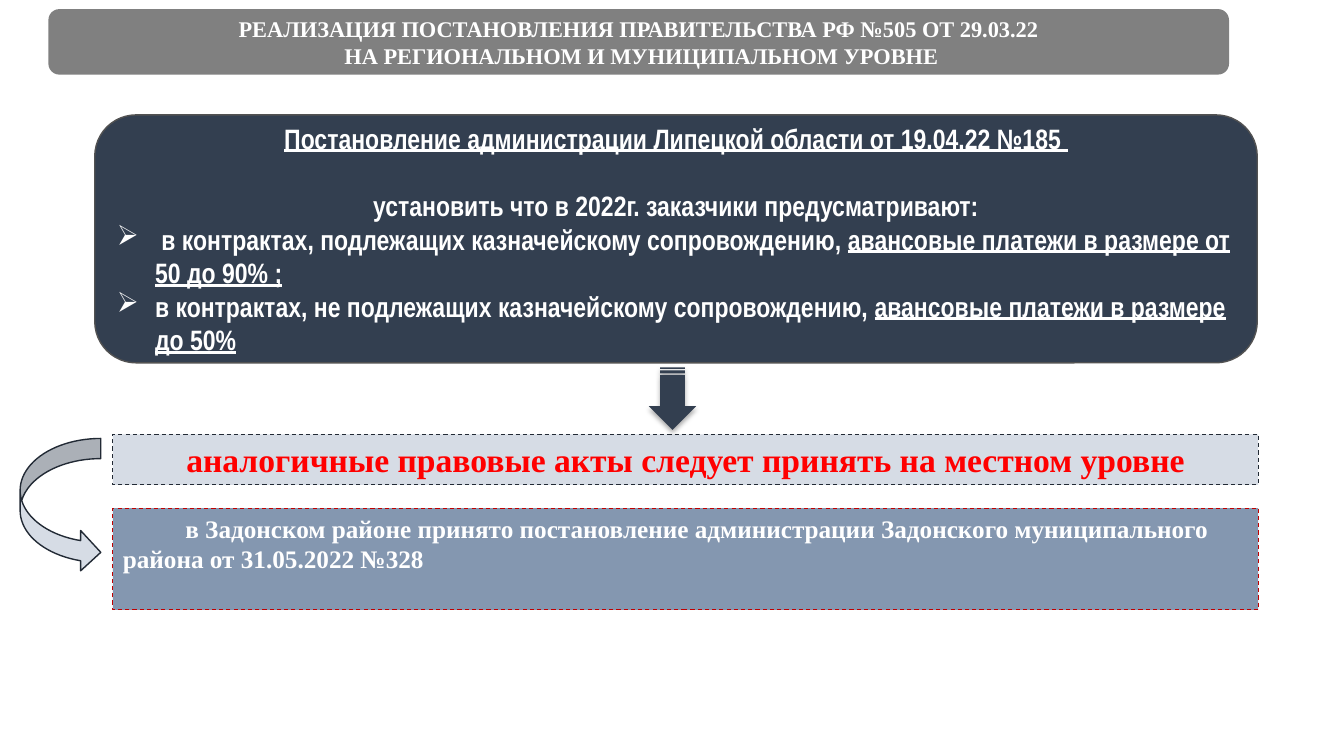
import pptx
import pptx.util
import pptx.dml.color
import pptx.enum.dml
import pptx.enum.shapes
import pptx.enum.text
import pptx.oxml
import pptx.oxml.ns

SHAPE = pptx.enum.shapes.MSO_SHAPE
ALIGN = pptx.enum.text.PP_ALIGN
ANCHOR = pptx.enum.text.MSO_ANCHOR
SERIF, NARROW = "Times New Roman", "Arial Narrow"
EMU_PER_PX = 9144
BULLET_INDENT, FIRST_LINE = 38, 62
NS = pptx.oxml.ns.nsdecls("a")

TITLE = [
    ("center", 0, [("РЕАЛИЗАЦИЯ ПОСТАНОВЛЕНИЯ ПРАВИТЕЛЬСТВА РФ №505 ОТ 29.03.22", False)]),
    ("center", 0, [(" НА РЕГИОНАЛЬНОМ И МУНИЦИПАЛЬНОМ УРОВНЕ", False)]),
]
DECREE = [
    ("center", 24, [("Постановление администрации Липецкой области от 19.04.22 №185 ", True)]),
    ("center", 0, [("установить что в 2022г. заказчики предусматривают:", False)]),
    ("bullet", 0, [(" в контрактах, подлежащих казначейскому сопровождению, ", False),
                   ("авансовые платежи в размере от 50 до 90% ;", True)]),
    ("bullet", 0, [("в контрактах, не подлежащих казначейскому сопровождению, ", False),
                   ("авансовые платежи в размере до 50%", True)]),
]
LOCAL_ACTS = [
    ("center", 0, [("аналогичные правовые акты следует принять на местном уровне", False)]),
]
DISTRICT = [
    ("first_line", 0, [("в Задонском районе принято постановление администрации "
                        "Задонского муниципального района от 31.05.2022 №328", False)]),
]

# kind, (left, top, width, height), fill, (line, points, dashed), anchor, (font, size, colour), text
BOXES = [
    (SHAPE.ROUNDED_RECTANGLE, (48, 9, 1171, 65), "808080", None,
     ANCHOR.MIDDLE, (SERIF, 16, "FFFFFF"), TITLE),
    (SHAPE.ROUNDED_RECTANGLE, (94, 114, 1153, 246), "333F50", ("525252", 1, False),
     ANCHOR.MIDDLE, (NARROW, 20, "FFFFFF"), DECREE),
    (SHAPE.RECTANGLE, (112, 431, 1136, 50), "D6DCE5", ("222A35", 0.75, True),
     ANCHOR.TOP, (SERIF, 24, "FF0000"), LOCAL_ACTS),
    (SHAPE.RECTANGLE, (112, 504, 1136, 101), "8497B0", ("C00000", 0.75, True),
     ANCHOR.TOP, (SERIF, 18, "FFFFFF"), DISTRICT),
]
DOWN_ARROW = (SHAPE.STRIPED_RIGHT_ARROW, (636, 372, 62, 47), "333F50", None)
CURVED_ARROW = (SHAPE.CURVED_RIGHT_ARROW, (20, 435, 80, 133), "D6DCE5", ("222A35", 1, False))


def px(n):
    return pptx.util.Emu(n * EMU_PER_PX)


def rgb(value):
    return pptx.dml.color.RGBColor.from_string(value)


def add_shape(s, kind, box, fill, line):
    sp = s.shapes.add_shape(kind, *map(px, box))
    sp.shadow.inherit = False
    sp.fill.solid()
    sp.fill.fore_color.rgb = rgb(fill)
    if line is None:
        sp.line.fill.background()
    else:
        colour, width, dashed = line
        sp.line.color.rgb = rgb(colour)
        sp.line.width = pptx.util.Pt(width)
        if dashed:
            sp.line.dash_style = pptx.enum.dml.MSO_LINE.DASH
    return sp


def add_text(sp, anchor, style, lines):
    font, size, colour = style
    tf = sp.text_frame
    tf.word_wrap = True
    tf.vertical_anchor = anchor
    for i, (layout, after, runs) in enumerate(lines):
        p = tf.paragraphs[0] if i == 0 else tf.add_paragraph()
        p.alignment = ALIGN.CENTER if layout == "center" else ALIGN.LEFT
        p.space_after = pptx.util.Pt(after)
        p.font.name = font
        p.font.size = pptx.util.Pt(size)
        p.font.bold = True
        p.font.color.rgb = rgb(colour)
        for text, underlined in runs:
            r = p.add_run()
            r.text = text
            if underlined:
                r.font.underline = True
        pPr = p._p.get_or_add_pPr()
        if layout == "first_line":
            pPr.set("indent", str(px(FIRST_LINE)))
        elif layout == "bullet":
            pPr.set("marL", str(px(BULLET_INDENT)))
            pPr.set("indent", str(-px(BULLET_INDENT)))
            bullet = pptx.oxml.parse_xml(f'<a:buChar {NS} char="➢"/>')
            pPr.find(pptx.oxml.ns.qn("a:defRPr")).addprevious(bullet)


def add_shadow(sp):
    effects = sp._element.spPr.find(pptx.oxml.ns.qn("a:effectLst"))
    effects.append(pptx.oxml.parse_xml(
        f'<a:outerShdw {NS} blurRad="{pptx.util.Pt(3.5)}" dist="{pptx.util.Pt(2.2)}" '
        'dir="5400000" rotWithShape="0"><a:srgbClr val="000000">'
        '<a:alpha val="32000"/></a:srgbClr></a:outerShdw>'))


def main():
    prs = pptx.Presentation()
    prs.slide_width, prs.slide_height = px(1333), px(750)
    s = prs.slides.add_slide(prs.slide_layouts[6])

    for kind, box, fill, line, anchor, style, lines in BOXES:
        add_text(add_shape(s, kind, box, fill, line), anchor, style, lines)

    arrow = add_shape(s, *DOWN_ARROW)
    arrow.rotation = 90
    arrow.adjustments[0] = 0.52
    arrow.adjustments[1] = 0.5
    add_shadow(arrow)

    add_shape(s, *CURVED_ARROW)
    prs.save("out.pptx")


if __name__ == "__main__":
    main()
